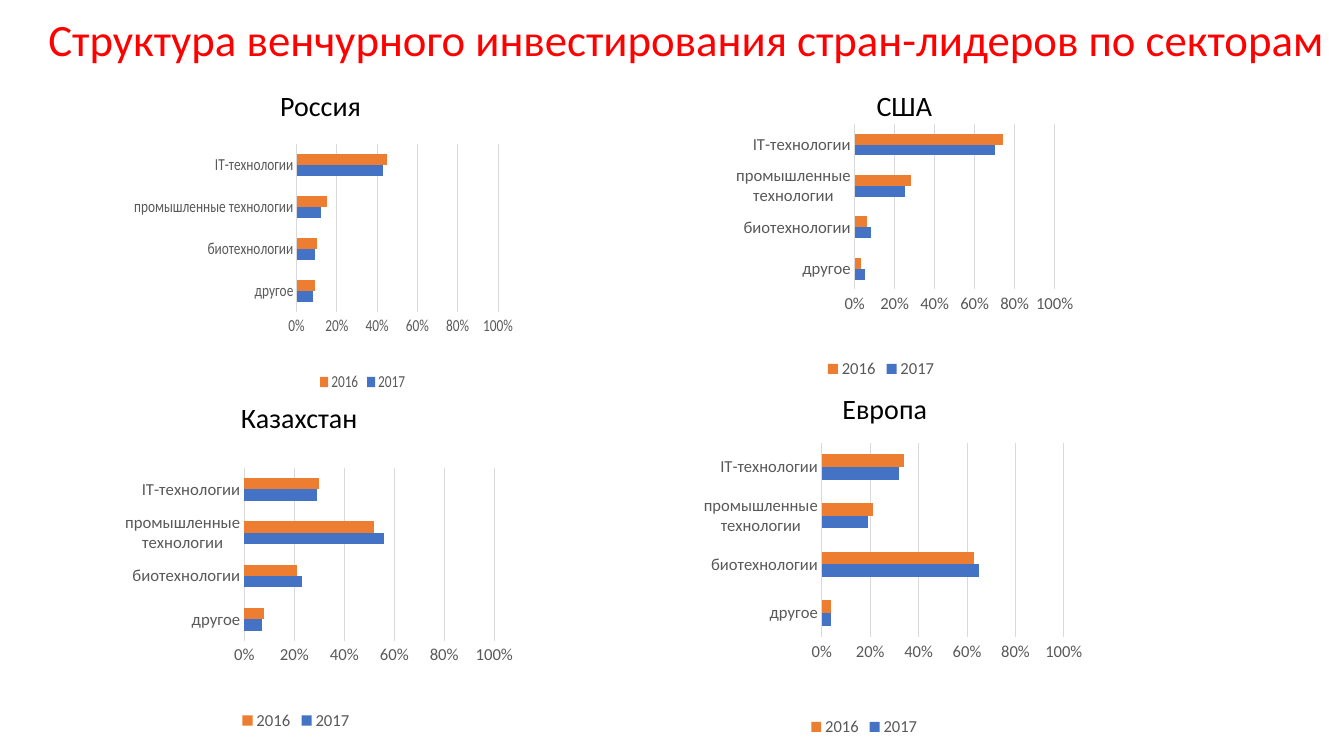
from lxml import etree
from pptx import Presentation
from pptx.chart.data import CategoryChartData
from pptx.dml.color import RGBColor
from pptx.enum.chart import XL_CHART_TYPE, XL_LEGEND_POSITION, XL_TICK_MARK
from pptx.enum.text import MSO_AUTO_SIZE
from pptx.oxml.ns import qn
from pptx.util import Cm, Pt

BAR_CLUSTERED = XL_CHART_TYPE.BAR_CLUSTERED
LEGEND_BOTTOM = XL_LEGEND_POSITION.BOTTOM
NO_TICK = XL_TICK_MARK.NONE
FIT_SHAPE = MSO_AUTO_SIZE.SHAPE_TO_FIT_TEXT

FONT = "Calibri"
COLORS = {
    "title": "FF0000",
    "heading": "000000",
    "label": "595959",
    "grid": "D9D9D9",
    "2017": "4472C4",
    "2016": "ED7D31",
}
SECTORS = ["другое", "биотехнологии", "промышленные технологии", "IT-технологии"]
TITLE = "Структура венчурного инвестирования стран-лидеров по секторам"

# Boxes are left, top, width, height in cm; plot areas are fractions of the chart.
COUNTRIES = [
    {
        "name": "Россия",
        "heading": (6.81, 2.11, 2.72, 1.12),
        "chart": (3.38, 2.92, 9.55, 7.06),
        "plot": (0.28, 0.1, 0.67, 0.6),
        "shares": {"2017": (0.08, 0.09, 0.12, 0.43), "2016": (0.09, 0.1, 0.15, 0.45)},
    },
    {
        "name": "США",
        "heading": (21.84, 2.11, 1.93, 1.12),
        "chart": (17.45, 2.92, 9.6, 6.73),
        "plot": (0.43, 0.03, 0.53, 0.62),
        "shares": {"2017": (0.05, 0.08, 0.25, 0.7), "2016": (0.03, 0.06, 0.28, 0.74)},
    },
    {
        "name": "Казахстан",
        "heading": (5.82, 9.96, 3.48, 1.12),
        "chart": (2.03, 11.58, 10.9, 6.93),
        "plot": (0.38, 0.03, 0.58, 0.63),
        "shares": {"2017": (0.07, 0.23, 0.56, 0.29), "2016": (0.08, 0.21, 0.52, 0.3)},
    },
    {
        "name": "Европа",
        "heading": (20.98, 9.75, 2.67, 1.12),
        "chart": (16.43, 11, 10.85, 7.67),
        "plot": (0.4, 0.02, 0.57, 0.64),
        "shares": {"2017": (0.04, 0.65, 0.19, 0.32), "2016": (0.04, 0.63, 0.21, 0.34)},
    },
]


def rgb(role):
    return RGBColor.from_string(COLORS[role])


def set_all(target, formats):
    for attribute, value in formats.items():
        setattr(target, attribute, value)


def style_font(font, size, role):
    set_all(font, {"name": FONT, "size": Pt(size)})
    font.color.rgb = rgb(role)


def style_line(line):
    line.width = Pt(0.75)
    line.color.rgb = rgb("grid")


def add_label(slide, box, text, size, role):
    frame = slide.shapes.add_textbox(*map(Cm, box)).text_frame
    set_all(frame, {"word_wrap": False, "auto_size": FIT_SHAPE})
    run = frame.paragraphs[0].add_run()
    run.text = text
    style_font(run.font, size, role)


def place_plot(chart, fractions):
    """Fix the inner plot area at left, top, width, height."""
    plot_area = chart.plots[0]._element.getparent()
    for old in plot_area.findall(qn("c:layout")):
        plot_area.remove(old)
    layout = etree.Element(qn("c:layout"))
    plot_area.insert(0, layout)
    manual = etree.SubElement(layout, qn("c:manualLayout"))
    settings = [("layoutTarget", "inner"), ("xMode", "edge"), ("yMode", "edge")]
    settings += zip("xywh", fractions)
    for tag, value in settings:
        etree.SubElement(manual, qn(f"c:{tag}")).set("val", str(value))


def style_axes(chart):
    for axis in (chart.category_axis, chart.value_axis):
        set_all(axis, {"major_tick_mark": NO_TICK, "minor_tick_mark": NO_TICK})
        style_font(axis.tick_labels.font, 12, "label")
    chart.category_axis.has_major_gridlines = False
    style_line(chart.category_axis.format.line)

    shares = chart.value_axis
    set_all(shares, {"minimum_scale": 0, "maximum_scale": 1, "major_unit": 0.2,
                     "has_major_gridlines": True})
    set_all(shares.tick_labels, {"number_format": "0%", "number_format_is_linked": False})
    shares.format.line.fill.background()
    style_line(shares.major_gridlines.format.line)


def add_sector_chart(slide, country):
    data = CategoryChartData(number_format="0%")
    data.categories = SECTORS
    for year, values in country["shares"].items():
        data.add_series(year, values)
    chart = slide.shapes.add_chart(BAR_CLUSTERED, *map(Cm, country["chart"]), data).chart
    style_font(chart.font, 10, "heading")
    set_all(chart, {"has_title": False, "has_legend": True})
    set_all(chart.legend, {"position": LEGEND_BOTTOM, "include_in_layout": False})
    style_font(chart.legend.font, 12, "label")

    bars = chart.plots[0]
    set_all(bars, {"gap_width": 182, "overlap": 0, "vary_by_categories": False})
    for series in bars.series:
        series.invert_if_negative = False
        series.format.fill.solid()
        series.format.fill.fore_color.rgb = rgb(series.name)
    style_axes(chart)
    place_plot(chart, country["plot"])


def main():
    deck = Presentation()
    set_all(deck, {"slide_width": Cm(33.87), "slide_height": Cm(19.05)})
    slide = deck.slides.add_slide(deck.slide_layouts[6])
    for country in COUNTRIES:
        add_sector_chart(slide, country)
        add_label(slide, country["heading"], country["name"], 20, "heading")
    add_label(slide, (0.97, 0.18, 32.99, 1.63), TITLE, 32, "title")
    deck.save("out.pptx")


if __name__ == "__main__":
    main()
